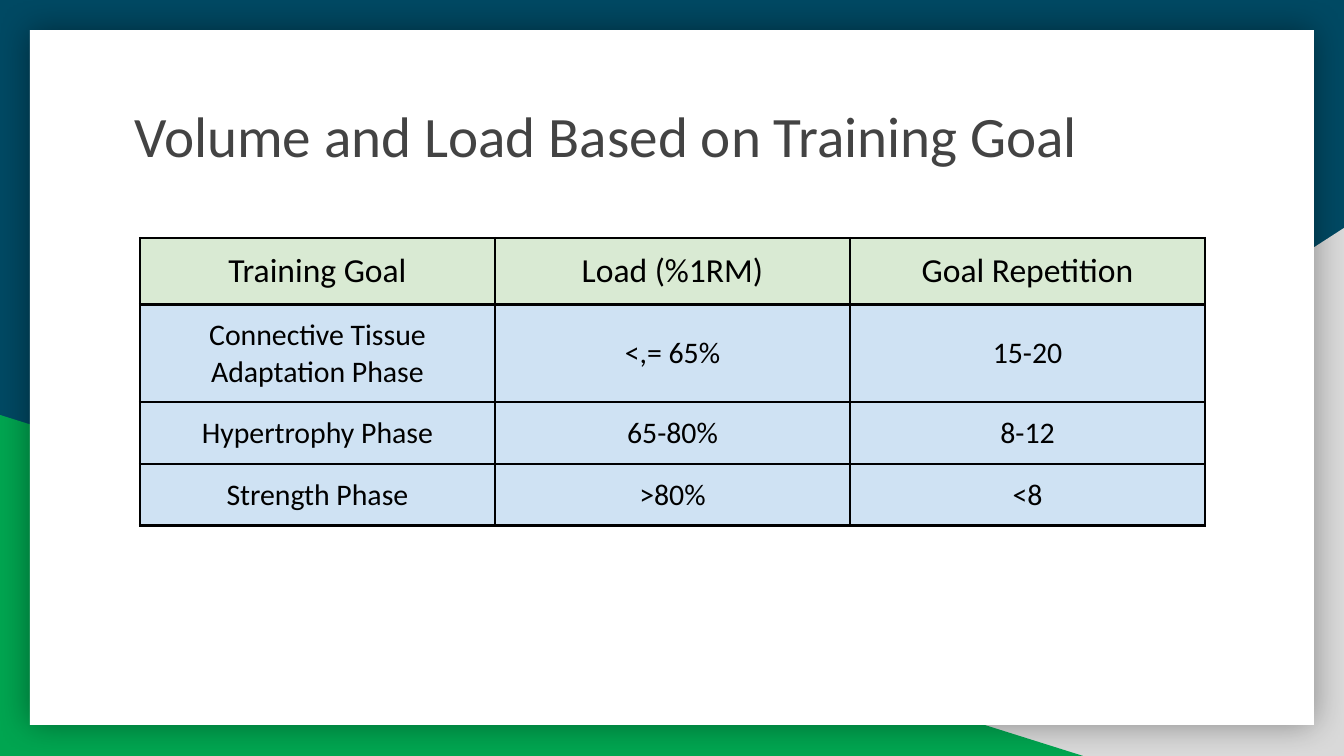
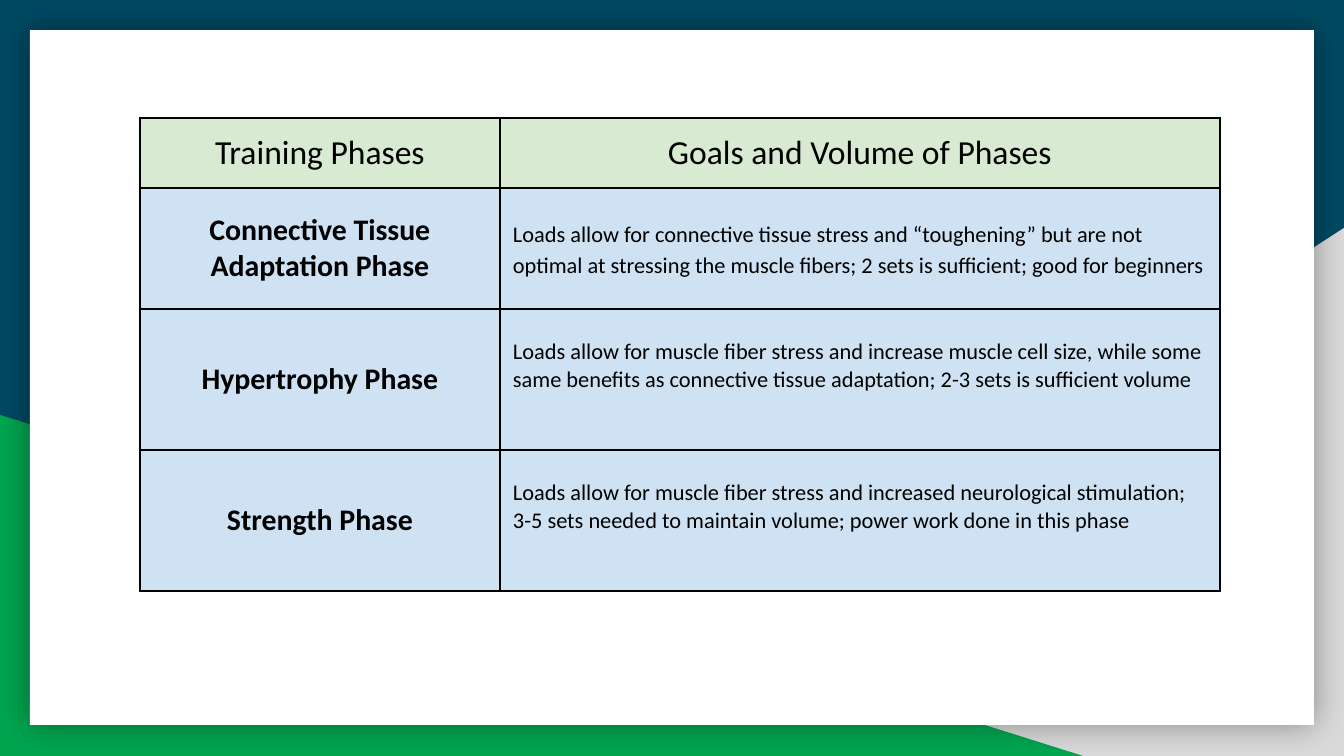
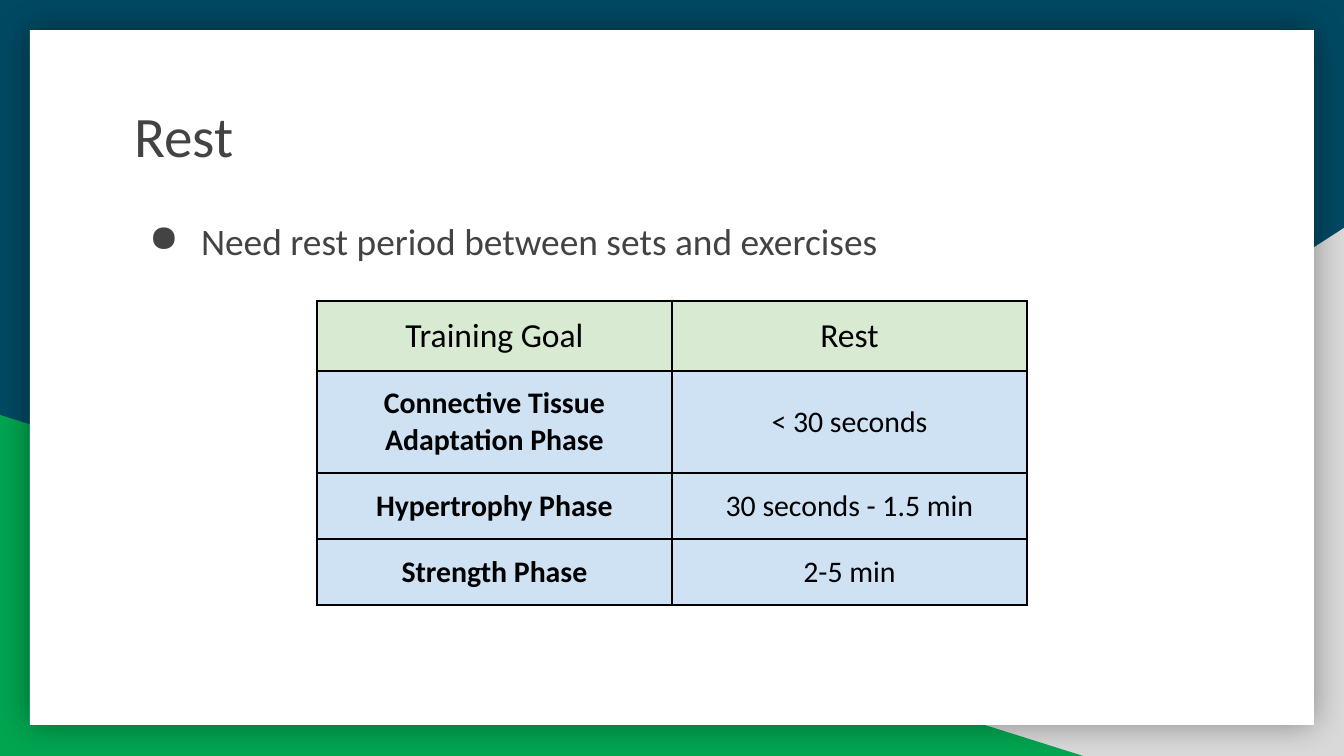
import dataclasses

import pptx
import pptx.dml.color
import pptx.enum.shapes
import pptx.enum.text
import pptx.oxml
import pptx.oxml.ns
import pptx.util

SHAPE = pptx.enum.shapes.MSO_SHAPE
ALIGN = pptx.enum.text.PP_ALIGN
MIDDLE = pptx.enum.text.MSO_ANCHOR.MIDDLE
NS = pptx.oxml.ns.nsdecls("a")


@dataclasses.dataclass(frozen=True)
class Theme:
    font: str = "Calibri"
    navy: str = "004963"
    green: str = "00A550"
    grey: str = "D9D9D9"
    white: str = "FFFFFF"
    ink: str = "434343"
    black: str = "000000"
    head: str = "D9EAD3"
    body: str = "CFE2F3"
    title: float = 30.6
    point: int = 20
    label: int = 18
    cell: int = 16
    note: int = 12
    rule: float = 1.5


T = Theme()
WIDE, HIGH = 1344, 756
PAD = 13
PHASES = ["Connective Tissue Adaptation Phase", "Hypertrophy Phase", "Strength Phase"]


def px(n):
    return pptx.util.Emu(round(n * 914400 / 134.4))


def rgb(code):
    return pptx.dml.color.RGBColor.from_string(code)


def xml(text):
    return pptx.oxml.parse_xml(text)


def add_run(para, text, size, color, bold=False):
    run = para.add_run()
    run.text = text
    font = run.font
    font.name, font.size, font.bold = T.font, pptx.util.Pt(size), bold
    font.color.rgb = rgb(color)


def set_pads(area, foot=PAD):
    area.margin_left = area.margin_right = area.margin_top = px(PAD)
    area.margin_bottom = px(foot)


# Backdrop shared by all slides
def add_form(slide, kind, box, color):
    form = slide.shapes.add_shape(kind, *map(px, box))
    form.shadow.inherit = False
    form.fill.solid()
    form.fill.fore_color.rgb = rgb(color)
    form.line.fill.background()
    return form


def add_slide(deck):
    slide = deck.slides.add_slide(deck.slide_layouts[6])
    fill = slide.background.fill
    fill.solid()
    fill.fore_color.rgb = rgb(T.navy)
    right = add_form(slide, SHAPE.RIGHT_TRIANGLE, (527, 228, WIDE - 527, HIGH - 228), T.grey)
    right.element.spPr.xfrm.set("flipH", "1")
    add_form(slide, SHAPE.RIGHT_TRIANGLE, (0, 415, 1083, HIGH - 415), T.green)
    card = add_form(slide, SHAPE.RECTANGLE, (30, 30, WIDE - 60, 695), T.white)
    glow = card.element.spPr.find(pptx.oxml.ns.qn("a:effectLst"))
    glow.append(xml(
        f'<a:outerShdw {NS} blurRad="{pptx.util.Pt(18)}" dist="0" dir="0" algn="ctr" rotWithShape="0">'
        f'<a:srgbClr val="{T.black}"><a:alpha val="40000"/></a:srgbClr></a:outerShdw>'))
    return slide


# Title and bullet text
def add_text(slide, box, text, size):
    frame = slide.shapes.add_textbox(*map(px, box)).text_frame
    frame.word_wrap = True
    set_pads(frame)
    para = frame.paragraphs[0]
    add_run(para, text, size, T.ink)
    return para


def add_title(slide, text):
    add_text(slide, (121, 87, 1103, 94), text, T.title)


def add_point(slide, box, text):
    para = add_text(slide, box, text, T.point)
    props = para._p.get_or_add_pPr()
    props.set("marL", str(px(67)))
    props.set("indent", str(px(-52)))
    props.append(xml(f'<a:buClr {NS}><a:srgbClr val="{T.ink}"/></a:buClr>'))
    props.append(xml(f'<a:buChar {NS} char="●"/>'))
    para.line_spacing = 1.15


# Tables
def add_edges(cell):
    props = cell._tc.get_or_add_tcPr()
    for at, side in enumerate("LRTB"):
        props.insert(at, xml(
            f'<a:ln{side} {NS} w="{pptx.util.Pt(T.rule)}"><a:solidFill>'
            f'<a:srgbClr val="{T.black}"/></a:solidFill></a:ln{side}>'))


def fill_cell(cell, text, size, bold=False, align=ALIGN.CENTER, foot=PAD):
    cell.vertical_anchor = MIDDLE
    set_pads(cell, foot)
    para = cell.text_frame.paragraphs[0]
    para.alignment = align
    add_run(para, text, size, T.black, bold)
    return para


def add_grid(slide, spot, wide, cols, rows):
    size = (wide * cols, sum(rows))
    table = slide.shapes.add_table(len(rows), cols, *map(px, spot + size)).table
    table.first_row = table.horz_banding = False
    for col in table.columns:
        col.width = px(wide)
    for at, high in enumerate(rows):
        table.rows[at].height = px(high)
        for cell in table.rows[at].cells:
            cell.fill.solid()
            cell.fill.fore_color.rgb = rgb(T.body if at else T.head)
            add_edges(cell)
    return table


def fill_grid(table, data, bold):
    for r, line in enumerate(data):
        for c, text in enumerate(line):
            fill_cell(table.cell(r, c), text, T.cell if r else T.label, bold and r > 0 and c == 0)


# Slides
def load_slide(deck):
    slide = add_slide(deck)
    add_title(slide, "Volume and Load Based on Training Goal")
    table = add_grid(slide, (140, 238), 355, 3, [56] * 4)
    loads = ["<,= 65%", "65-80%", ">80%"]
    reps = ["15-20", "8-12", "<8"]
    heads = ("Training Goal", "Load (%1RM)", "Goal Repetition")
    fill_grid(table, [heads, *zip(PHASES, loads, reps)], False)


def phase_slide(deck):
    slide = add_slide(deck)
    table = add_grid(slide, (140, 118), 360, 3, [70, 121, 141, 141])
    for r in range(4):
        table.cell(r, 1).merge(table.cell(r, 2))
    fill_grid(table, [("Training Phases", "Goals and Volume of Phases"), *((name,) for name in PHASES)], True)
    notes = [
        "Loads allow for connective tissue stress and “toughening” but are not optimal at "
        "stressing the muscle fibers; 2 sets is sufficient; good for beginners",
        "Loads allow for muscle fiber stress and increase muscle cell size, while some same "
        "benefits as connective tissue adaptation; 2-3 sets is sufficient volume",
        "Loads allow for muscle fiber stress and increased neurological stimulation; 3-5 sets "
        "needed to maintain volume; power work done in this phase",
    ]
    for r, (text, foot) in enumerate(zip(notes, (PAD, 40, 40)), 1):
        para = fill_cell(table.cell(r, 1), text, T.note, align=ALIGN.LEFT, foot=foot)
        if r == 1:
            para.line_spacing = 1.15
            para.space_after = pptx.util.Pt(12)


def rest_slide(deck):
    slide = add_slide(deck)
    add_title(slide, "Rest")
    add_point(slide, (121, 198, 1103, 360), "Need rest period between sets and exercises")
    table = add_grid(slide, (317, 301), 355, 2, [70, 102, 66, 66])
    rests = ["< 30 seconds", "30 seconds - 1.5 min", "2-5 min"]
    fill_grid(table, [("Training Goal", "Rest"), *zip(PHASES, rests)], True)


def main():
    deck = pptx.Presentation()
    deck.slide_width, deck.slide_height = px(WIDE), px(HIGH)
    load_slide(deck)
    phase_slide(deck)
    rest_slide(deck)
    deck.save("out.pptx")


if __name__ == "__main__":
    main()
